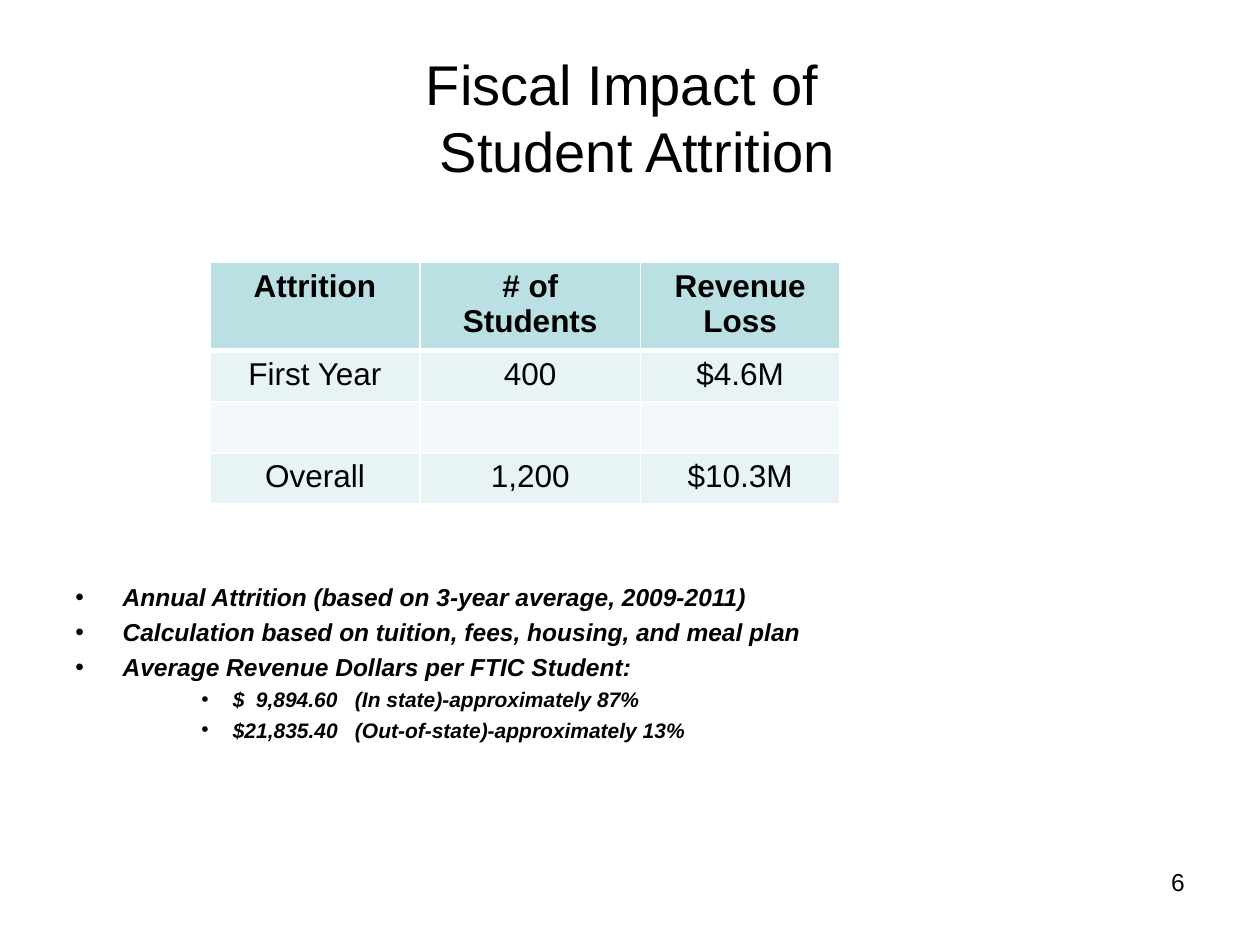
from lxml.etree import SubElement
from pptx import Presentation
from pptx.dml.color import RGBColor
from pptx.enum.text import MSO_ANCHOR, PP_ALIGN
from pptx.oxml.ns import qn
from pptx.util import Pt

BLACK = RGBColor(0x00, 0x00, 0x00)
HEADER_TEAL = RGBColor(0xBB, 0xE0, 0xE3)
ROW_TEAL = RGBColor(0xE7, 0xF3, 0xF4)
ROW_PALE = RGBColor(0xF3, 0xF9, 0xFA)
WHITE = RGBColor(0xFF, 0xFF, 0xFF)

ATTRITION = [
    ("Attrition", "# of Students", "Revenue Loss"),
    ("First Year", "400", "$4.6M"),
    ("", "", ""),
    ("Overall", "1,200", "$10.3M"),
]
ROW_FILLS = [HEADER_TEAL, ROW_TEAL, ROW_PALE, ROW_TEAL]
COLUMN_WIDTHS = [120, 126, 114]
ROW_HEIGHTS = [46.8, 29.2, 29.2, 29.2]

MAIN_LEVEL = {"size": 14, "margin": 27, "hanging": 27, "before": 3.2}
SUB_LEVEL = {"size": 12, "margin": 90, "hanging": 18, "before": 3}
AMOUNT_STOPS = [103.2, 159.8]
NOTES = [
    ("Annual Attrition (based on 3-year average, 2009-2011)", MAIN_LEVEL),
    ("Calculation based on tuition, fees, housing, and meal plan", MAIN_LEVEL),
    ("Average Revenue Dollars per FTIC Student:", MAIN_LEVEL),
    ("$\t9,894.60\t(In state)-approximately 87%", SUB_LEVEL),
    ("$21,835.40\t(Out-of-state)-approximately 13%", SUB_LEVEL),
]


def format_text(paragraph, size, **styles):
    """Apply the shared typeface and the given font values to every run."""
    for run in paragraph.runs:
        run.font.color.rgb = BLACK
        for name, value in {"name": "Arial", "size": Pt(size), **styles}.items():
            setattr(run.font, name, value)


def add_text_frame(slide, left, top, width, height, anchor=MSO_ANCHOR.TOP):
    """Add a wrapping text box and return its text frame."""
    frame = slide.shapes.add_textbox(Pt(left), Pt(top), Pt(width), Pt(height)).text_frame
    for name, value in {"word_wrap": True, "vertical_anchor": anchor}.items():
        setattr(frame, name, value)
    return frame


def add_label(slide, text, size, alignment, place, anchor=MSO_ANCHOR.TOP):
    """Add a single aligned paragraph at the given place."""
    paragraph = add_text_frame(slide, *place, anchor=anchor).paragraphs[0]
    paragraph.text = text
    paragraph.alignment = alignment
    format_text(paragraph, size)


def add_border(cell, side, width):
    """Draw one white edge of a table cell."""
    edge = SubElement(cell._tc.get_or_add_tcPr(), qn(f"a:ln{side}"), w=str(Pt(width)))
    SubElement(SubElement(edge, qn("a:solidFill")), qn("a:srgbClr"), val=str(WHITE))


def fill_cell(cell, text, color, is_header, top_width):
    """Write, border and colour one table cell."""
    paragraph = cell.text_frame.paragraphs[0]
    paragraph.text = text
    paragraph.alignment = PP_ALIGN.CENTER
    format_text(paragraph, 18, bold=is_header)
    edges = {"L": 1, "R": 1, "T": top_width, "B": 3 if is_header else 1}
    for side, width in edges.items():
        add_border(cell, side, width)
    cell.fill.solid()
    cell.fill.fore_color.rgb = color


def add_attrition_table(slide):
    """Add the table of students and revenue lost."""
    table = slide.shapes.add_table(
        len(ATTRITION), len(COLUMN_WIDTHS), Pt(120), Pt(150),
        Pt(sum(COLUMN_WIDTHS)), Pt(sum(ROW_HEIGHTS))).table
    for column, width in zip(table.columns, COLUMN_WIDTHS):
        column.width = Pt(width)
    for index, (row, height) in enumerate(zip(table.rows, ROW_HEIGHTS)):
        row.height = Pt(height)
        top_width = 3 if index == 1 else 1
        for cell, text in zip(row.cells, ATTRITION[index]):
            fill_cell(cell, text, ROW_FILLS[index], index == 0, top_width)


def add_bullet(paragraph, text, level, is_first):
    """Write one bulleted note with a hanging indent."""
    paragraph.text = text
    paragraph.space_before = Pt(0 if is_first else level["before"])
    properties = paragraph._p.get_or_add_pPr()
    properties.set("marL", str(Pt(level["margin"])))
    properties.set("indent", str(-Pt(level["hanging"])))
    SubElement(properties, qn("a:buFont"), typeface="Arial")
    SubElement(properties, qn("a:buChar"), char="•")
    if "\t" in text:
        stops = SubElement(properties, qn("a:tabLst"))
        for position in AMOUNT_STOPS[-text.count("\t"):]:
            SubElement(stops, qn("a:tab"), pos=str(Pt(position)), algn="l")
    format_text(paragraph, level["size"], bold=True, italic=True)


def add_notes_list(slide):
    """Add the bulleted notes below the table."""
    frame = add_text_frame(slide, 36, 329, 648, 110)
    for index, (text, level) in enumerate(NOTES):
        paragraph = frame.add_paragraph() if index else frame.paragraphs[0]
        add_bullet(paragraph, text, level, index == 0)


def main():
    """Build the slide and save it."""
    presentation = Presentation()
    presentation.slide_width, presentation.slide_height = Pt(720), Pt(540)
    slide = presentation.slides.add_slide(presentation.slide_layouts[6])
    add_label(slide, "Fiscal Impact of \v Student Attrition", 32, PP_ALIGN.CENTER,
              (36, 21.6, 648, 90), MSO_ANCHOR.MIDDLE)
    add_notes_list(slide)
    add_label(slide, "6", 14, PP_ALIGN.RIGHT, (516, 492, 168, 37.5))
    add_attrition_table(slide)
    presentation.save("out.pptx")


if __name__ == "__main__":
    main()
